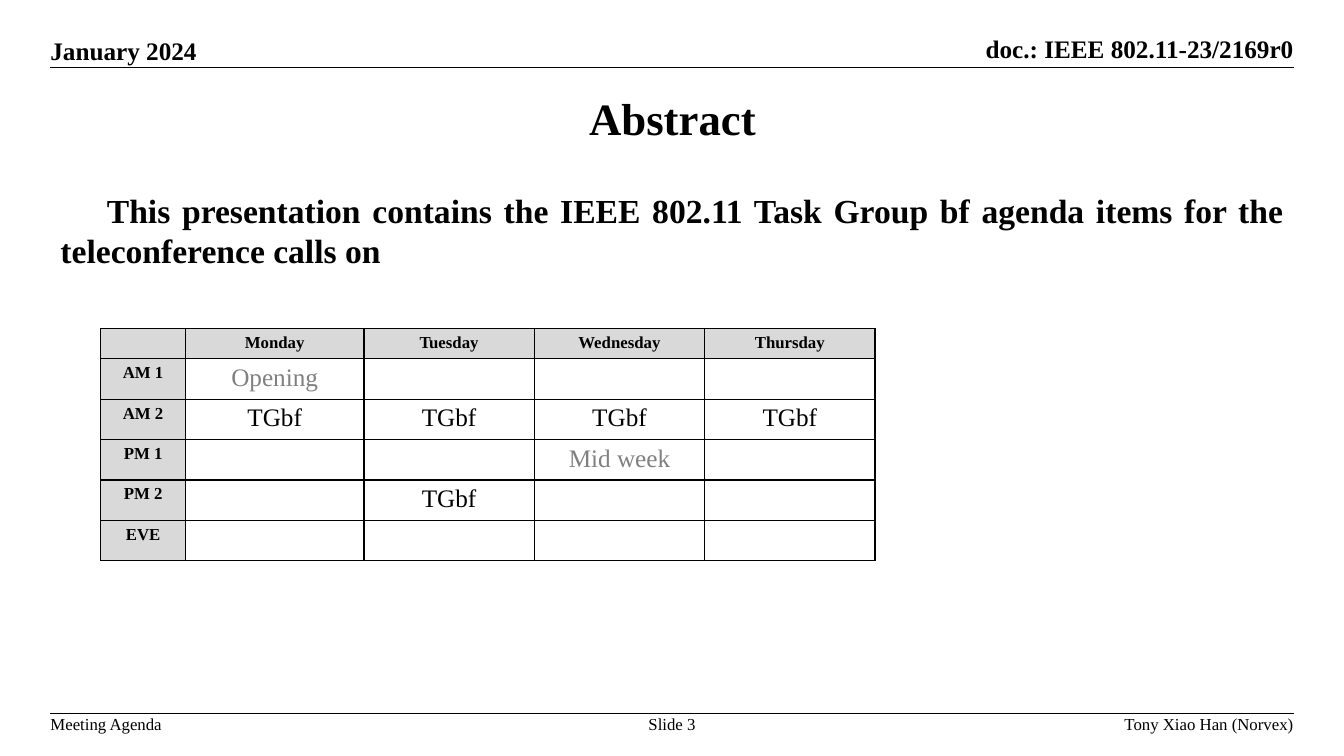
"""Build the abstract slide with its weekly session table."""
import pptx
import pptx.dml.color
import pptx.enum.shapes
import pptx.enum.text
import pptx.oxml.ns
import pptx.util
from lxml import etree

Inches = pptx.util.Inches
Pt = pptx.util.Pt
Align = pptx.enum.text.PP_ALIGN
Anchor = pptx.enum.text.MSO_ANCHOR

FONT = "Times New Roman"
BLACK, GRAY, SHADE, WHITE = "000000", "808080", "D9D9D9", "FFFFFF"
TITLE = "Abstract"
ABSTRACT = ("This presentation contains the IEEE 802.11 Task Group bf agenda items "
            "for the teleconference calls on")
HEADER = {"size": 18, "bold": True, "anchor": Anchor.BOTTOM}
FOOTER = {"size": 12}
LABELS = [
    ("January 2024", (0.5, 0.35, 1.47, 0.3), Align.LEFT, HEADER),
    ("doc.: IEEE 802.11-23/2169r0", (9.24, 0.33, 3.59, 0.3), Align.RIGHT, HEADER),
    ("Meeting Agenda", (0.5, 7.08, 1.12, 0.2), Align.LEFT, FOOTER),
    ("Slide 3", (6.37, 7.08, 0.59, 0.2), Align.CENTER, FOOTER),
    ("Tony Xiao Han (Norvex)", (8.82, 7.08, 4.01, 0.2), Align.RIGHT, FOOTER),
]
RULE_LEFT, RULE_RIGHT, RULE_TOPS = 0.5, 12.83, (0.67, 7.08)
SESSIONS = [
    ["", "Monday", "Tuesday", "Wednesday", "Thursday"],
    ["AM 1", "Opening", "", "", ""],
    ["AM 2", "TGbf", "TGbf", "TGbf", "TGbf"],
    ["PM 1", "", "", "Mid week", ""],
    ["PM 2", "", "TGbf", "", ""],
    ["EVE", "", "", "", ""],
]
PLENARIES = ("Opening", "Mid week")
COLUMN_WIDTHS = [0.84, 1.77, 1.69, 1.69, 1.69]
ROW_HEIGHTS = [0.3] + [0.4] * 5
TABLE_LEFT, TABLE_TOP = 1, 3.26


def color(value):
    return pptx.dml.color.RGBColor.from_string(value)


def write_text(frame, text, size=18, bold=False, fill=BLACK, align=Align.LEFT,
               anchor=Anchor.TOP):
    frame.vertical_anchor = anchor
    para = frame.paragraphs[0]
    para.alignment = align
    if text:
        span = para.add_run()
        span.text = text
        span.font.name = FONT
        span.font.size = Pt(size)
        span.font.bold = bold
        span.font.color.rgb = color(fill)
    else:
        etree.SubElement(para._p, pptx.oxml.ns.qn("a:endParaRPr"), sz=str(size * 100))
    return para


def place(shape, left, top, width, height):
    shape.left, shape.top = Inches(left), Inches(top)
    shape.width, shape.height = Inches(width), Inches(height)


def add_label(page, text, area, align, style):
    box = page.shapes.add_textbox(*map(Inches, area))
    frame = box.text_frame
    frame.word_wrap = False
    frame.margin_left = frame.margin_right = frame.margin_top = frame.margin_bottom = 0
    write_text(frame, text, align=align, **style)


def add_rule(page, top):
    rule = page.shapes.add_connector(
        pptx.enum.shapes.MSO_CONNECTOR.STRAIGHT,
        Inches(RULE_LEFT), Inches(top), Inches(RULE_RIGHT), Inches(top))
    rule.line.color.rgb = color(BLACK)
    rule.line.width = Pt(1)
    etree.SubElement(rule._element.spPr, pptx.oxml.ns.qn("a:effectLst"))


def add_borders(cell):
    properties = cell._tc.get_or_add_tcPr()
    for index, side in enumerate(("lnL", "lnR", "lnT", "lnB")):
        border = etree.Element(pptx.oxml.ns.qn("a:" + side), w=str(Pt(1)))
        solid = etree.SubElement(border, pptx.oxml.ns.qn("a:solidFill"))
        etree.SubElement(solid, pptx.oxml.ns.qn("a:srgbClr"), val=BLACK)
        properties.insert(index, border)


def add_sessions(page):
    table = page.shapes.add_table(
        len(SESSIONS), len(COLUMN_WIDTHS), Inches(TABLE_LEFT), Inches(TABLE_TOP),
        Inches(sum(COLUMN_WIDTHS)), Inches(sum(ROW_HEIGHTS))).table
    table.first_row = table.horz_banding = False
    for column, width in zip(table.columns, COLUMN_WIDTHS):
        column.width = Inches(width)
    for row, height in zip(table.rows, ROW_HEIGHTS):
        row.height = Inches(height)
    for row_index, row in enumerate(SESSIONS):
        for column_index, text in enumerate(row):
            cell = table.cell(row_index, column_index)
            heading = row_index == 0 or column_index == 0
            cell.fill.solid()
            cell.fill.fore_color.rgb = color(SHADE if heading else WHITE)
            write_text(cell.text_frame, text, size=12 if heading else 18, bold=heading,
                       fill=GRAY if text in PLENARIES else BLACK, align=Align.CENTER)
            add_borders(cell)


def main():
    deck = pptx.Presentation()
    deck.slide_width, deck.slide_height = Inches(13.33), Inches(7.5)
    page = deck.slides.add_slide(deck.slide_layouts[1])
    title, body = page.placeholders
    place(title, 2.42, 0.58, 8.5, 1.17)
    write_text(title.text_frame, TITLE, size=32, bold=True, align=Align.CENTER,
               anchor=Anchor.MIDDLE)
    place(body, 0.5, 1.83, 12.33, 4.5)
    para = write_text(body.text_frame, ABSTRACT, size=24, bold=True, align=Align.JUSTIFY)
    para.space_before = Pt(4.8)
    properties = para._p.get_or_add_pPr()
    properties.set("marL", "0")
    properties.set("indent", str(Inches(0.46)))
    etree.SubElement(properties, pptx.oxml.ns.qn("a:buNone"))
    for label in LABELS:
        add_label(page, *label)
    for top in RULE_TOPS:
        add_rule(page, top)
    add_sessions(page)
    deck.save("out.pptx")


if __name__ == "__main__":
    main()
